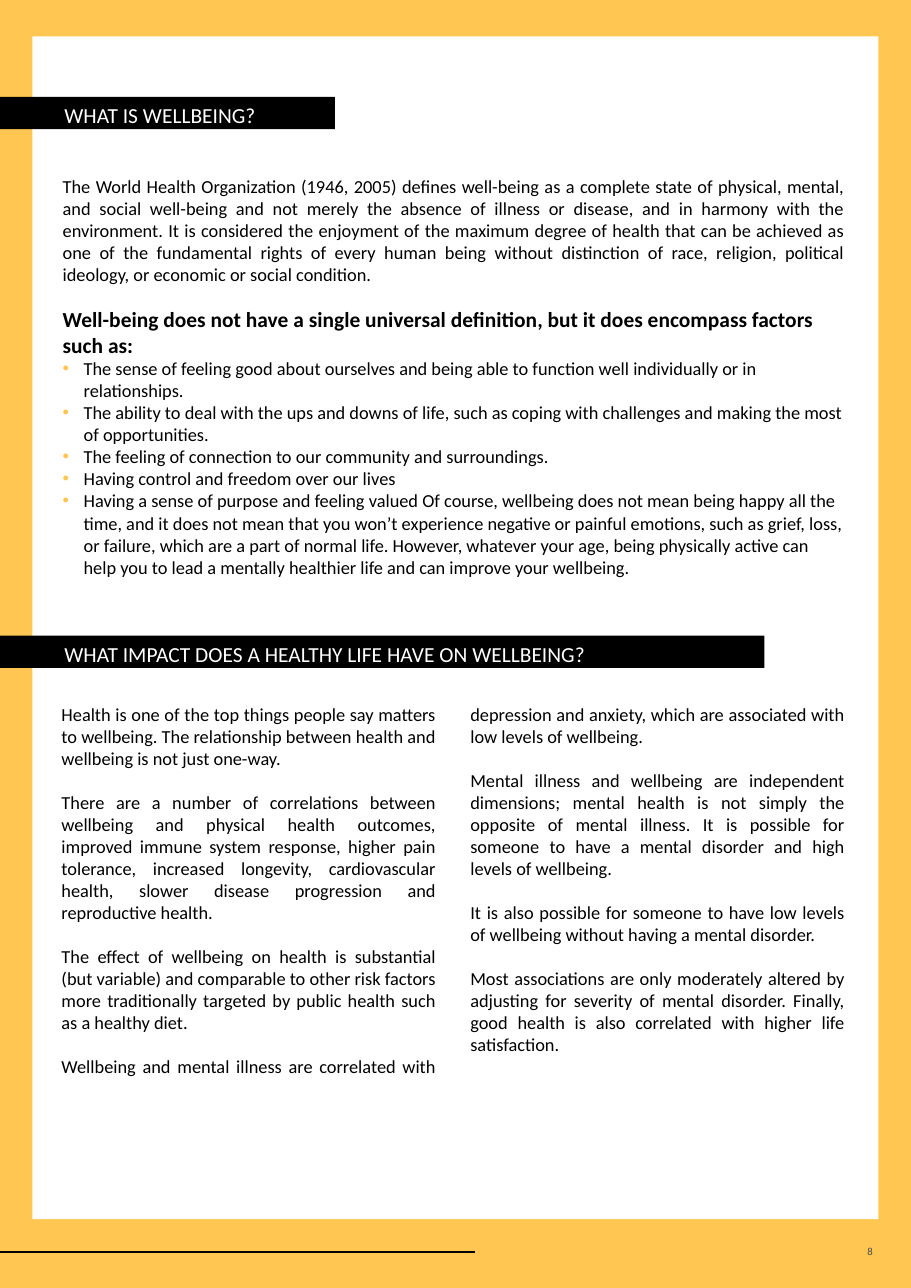
from dataclasses import dataclass

from pptx import Presentation
from pptx import util as u
from pptx.dml import color
from pptx.enum import shapes, text
from pptx.oxml import ns
from lxml import etree

DEFINITION = (
    "The World Health Organization (1946, 2005) defines well-being as a complete state of physical, mental, "
    "and social well-being and not merely the absence of illness or disease, and in harmony with the "
    "environment. It is considered the enjoyment of the maximum degree of health that can be achieved as "
    "one of the fundamental rights of every human being without distinction of race, religion, political "
    "ideology, or economic or social condition."
)
FACTORS_HEADING = (
    "Well-being does not have a single universal definition, but it does encompass factors such as:"
)
FACTORS = [
    "The sense of feeling good about ourselves and being able to function well individually or in relationships.",
    "The ability to deal with the ups and downs of life, such as coping with challenges and making the most "
    "of opportunities.",
    "The feeling of connection to our community and surroundings.",
    "Having control and freedom over our lives",
    "Having a sense of purpose and feeling valued Of course, wellbeing does not mean being happy all the "
    "time, and it does not mean that you won’t experience negative or painful emotions, such as grief, loss, "
    "or failure, which are a part of normal life. However, whatever your age, being physically active can "
    "help you to lead a mentally healthier life and can improve your wellbeing.",
]
IMPACT = [
    "Health is one of the top things people say matters to wellbeing. The relationship between health and "
    "wellbeing is not just one-way.",
    "There are a number of correlations between wellbeing and physical health outcomes, improved immune "
    "system response, higher pain tolerance, increased longevity, cardiovascular health, slower disease "
    "progression and reproductive health.",
    "The effect of wellbeing on health is substantial (but variable) and comparable to other risk factors "
    "more traditionally targeted by public health such as a healthy diet.",
    "Wellbeing and mental illness are correlated with depression and anxiety, which are associated with low "
    "levels of wellbeing.",
    "Mental illness and wellbeing are independent dimensions; mental health is not simply the opposite of "
    "mental illness. It is possible for someone to have a mental disorder and high levels of wellbeing.",
    "It is also possible for someone to have low levels of wellbeing without having a mental disorder.",
    "Most associations are only moderately altered by adjusting for severity of mental disorder. Finally, "
    "good health is also correlated with higher life satisfaction.",
]
SECTION_BARS = [
    ("WHAT IS WELLBEING?", 63.4, 218.9),
    ("WHAT IMPACT DOES A HEALTHY LIFE HAVE ON WELLBEING?", 415.4, 499.7),
]
PAGE_NUMBER = "8"


@dataclass(frozen=True)
class Theme:
    font: str = "Calibri"
    yellow: str = "FFC652"
    white: str = "FFFFFF"
    black: str = "000000"
    grey: str = "4B4B4B"
    heading: float = 14
    body: float = 12
    small: float = 7


THEME = Theme()
PAGE_WIDTH, PAGE_HEIGHT = 595.44, 841.68
BAR_HEIGHT = 21.1
BAR_INDENT = 35
BULLET_INDENT = 13.7
COLUMN_GAP = 22.3
LINE_HEIGHT = 14.4


def rgb(value):
    return color.RGBColor.from_string(value)


def add_block(slide, left, top, width, height, fill):
    shape = slide.shapes.add_shape(
        shapes.MSO_SHAPE.RECTANGLE, u.Pt(left), u.Pt(top), u.Pt(width), u.Pt(height))
    shape.shadow.inherit = False
    shape.fill.solid()
    shape.fill.fore_color.rgb = rgb(fill)
    shape.line.fill.background()
    return shape


def add_text_frame(slide, left, top, width, height):
    box = slide.shapes.add_textbox(u.Pt(left), u.Pt(top), u.Pt(width), u.Pt(height))
    box.text_frame.word_wrap = True
    return box.text_frame


def write(paragraph, words, size=THEME.body, tint=THEME.black, bold=False,
          align=text.PP_ALIGN.LEFT, before=0):
    paragraph.alignment = align
    if before:
        paragraph.space_before = u.Pt(before)
    run = paragraph.add_run()
    run.text = words
    run.font.name = THEME.font
    run.font.size = u.Pt(size)
    run.font.bold = bold
    run.font.color.rgb = rgb(tint)


def add_bullet(paragraph):
    properties = paragraph._p.get_or_add_pPr()
    properties.set("marL", str(u.Pt(BULLET_INDENT)))
    properties.set("indent", str(-u.Pt(BULLET_INDENT)))
    tint = etree.SubElement(properties, ns.qn("a:buClr"))
    etree.SubElement(tint, ns.qn("a:srgbClr")).set("val", THEME.yellow)
    etree.SubElement(properties, ns.qn("a:buFont")).set("typeface", "Arial")
    etree.SubElement(properties, ns.qn("a:buChar")).set("char", "•")


def add_page_frame(slide):
    add_block(slide, 0, 0, PAGE_WIDTH, PAGE_HEIGHT, THEME.yellow)
    add_block(slide, 21.2, 23.8, 553, 773, THEME.white)
    rule = slide.shapes.add_connector(
        shapes.MSO_CONNECTOR.STRAIGHT, u.Pt(0), u.Pt(818), u.Pt(310.4), u.Pt(818))
    rule.line.color.rgb = rgb(THEME.black)
    rule.line.width = u.Pt(1.5)
    etree.SubElement(rule._element.spPr, ns.qn("a:effectLst"))
    frame = add_text_frame(slide, 499.7, 812.2, 77.8, 11.5)
    frame.vertical_anchor = text.MSO_ANCHOR.MIDDLE
    write(frame.paragraphs[0], PAGE_NUMBER, THEME.small, THEME.grey, align=text.PP_ALIGN.RIGHT)


def add_section_bar(slide, title, top, width):
    frame = add_block(slide, 0, top, width, BAR_HEIGHT, THEME.black).text_frame
    frame.vertical_anchor = text.MSO_ANCHOR.TOP
    frame.word_wrap = True
    paragraph = frame.paragraphs[0]
    paragraph._p.get_or_add_pPr().set("marL", str(u.Pt(BAR_INDENT)))
    write(paragraph, title, THEME.heading, THEME.white)


def add_definition(slide):
    frame = add_text_frame(slide, 33.9, 111, 525.6, 270)
    write(frame.paragraphs[0], DEFINITION, align=text.PP_ALIGN.JUSTIFY)
    write(frame.add_paragraph(), FACTORS_HEADING, THEME.heading, bold=True, before=13.4)
    for factor in FACTORS:
        paragraph = frame.add_paragraph()
        add_bullet(paragraph)
        write(paragraph, factor)


def add_impact(slide):
    frame = add_text_frame(slide, 33.1, 455.8, 526.3, 260)
    columns = frame._txBody.bodyPr
    columns.set("numCol", "2")
    columns.set("spcCol", str(u.Pt(COLUMN_GAP)))
    for index, words in enumerate(IMPACT):
        paragraph = frame.add_paragraph() if index else frame.paragraphs[0]
        write(paragraph, words, align=text.PP_ALIGN.JUSTIFY, before=LINE_HEIGHT if index else 0)


def main():
    presentation = Presentation()
    presentation.slide_width = u.Pt(PAGE_WIDTH)
    presentation.slide_height = u.Pt(PAGE_HEIGHT)
    slide = presentation.slides.add_slide(presentation.slide_layouts[6])
    add_page_frame(slide)
    for title, top, width in SECTION_BARS:
        add_section_bar(slide, title, top, width)
    add_definition(slide)
    add_impact(slide)
    presentation.save("out.pptx")


if __name__ == "__main__":
    main()
